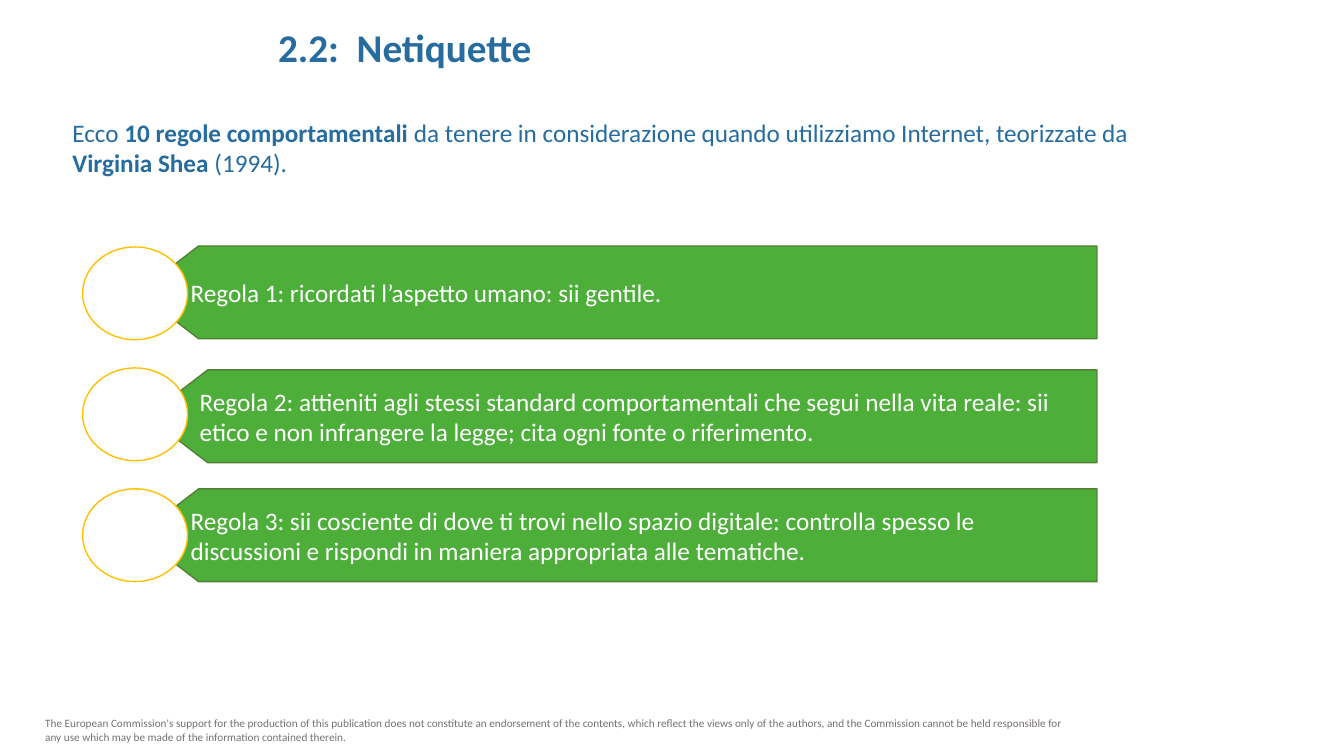
from pptx import Presentation
from pptx.dml.color import RGBColor
from pptx.enum.shapes import MSO_SHAPE as Shape
from pptx.enum.text import MSO_ANCHOR as Anchor
from pptx.oxml.ns import qn
from pptx.util import Inches, Pt
from lxml import etree

BLUE, GREEN, DARK_GREEN = "266C9F", "4EAE3A", "538035"
WHITE, GOLD, GRAY = "FFFFFF", "FFC000", "767171"


def paint(shape, fill, line):
    shape.shadow.inherit = False
    shape.fill.solid()
    shape.fill.fore_color.rgb = RGBColor.from_string(fill)
    shape.line.color.rgb = RGBColor.from_string(line)
    shape.line.width = Pt(1)


def write(shape, runs, size, color, **frame_format):
    frame = shape.text_frame
    for name, value in ({"word_wrap": True} | frame_format).items():
        setattr(frame, name, value)
    paragraph = frame.paragraphs[0]
    paragraph.alignment = 1
    for text, bold in runs:
        run = paragraph.add_run()
        run.text = text
        font_format = {"name": "Calibri", "size": Pt(size), "bold": bold}
        for name, value in font_format.items():
            setattr(run.font, name, value)
        run.font.color.rgb = RGBColor.from_string(color)
    return paragraph


presentation = Presentation()
presentation.slide_width = Inches(13.33)
presentation.slide_height = Inches(7.5)
slide = presentation.slides.add_slide(presentation.slide_layouts[6])

disclaimer = (
    "The European Commission's support for the production of this publication "
    "does not constitute an endorsement of the contents, which reflect the views "
    "only of the authors, and the Commission cannot be held responsible for any "
    "use which may be made of the information contained therein."
)
introduction = [
    ("Ecco ", False),
    ("10 regole comportamentali ", True),
    ("da tenere in considerazione quando utilizziamo Internet, teorizzate da ", False),
    ("Virginia Shea ", True),
    ("(1994).", False),
]
text_boxes = [
    (0.35, 7.06, 10.46, 0.37, [(disclaimer, False)], 8, GRAY),
    (0.62, 1.11, 10.84, 0.71, introduction, 18, BLUE),
]
for left, top, width, height, runs, size, color in text_boxes:
    box = slide.shapes.add_textbox(*map(Inches, (left, top, width, height)))
    write(box, runs, size, color)

title = slide.shapes.add_textbox(Inches(2.66), Inches(0.18), Inches(4.01), Inches(0.6))
title_paragraph = write(title, [("2.2:\tNetiquette", True)], 28, BLUE)
properties = title_paragraph._p.get_or_add_pPr()
tab_list = etree.SubElement(properties, qn("a:tabLst"))
etree.SubElement(tab_list, qn("a:tab"), pos=str(Inches(0.78)), algn="l")

rules = [
    (1.37, 2.44, "Regola 1: ricordati l’aspetto umano: sii gentile."),
    (1.46, 3.67, "Regola 2: attieniti agli stessi standard comportamentali che segui "
     "nella vita reale: sii etico e non infrangere la legge; cita ogni fonte o riferimento."),
    (1.37, 4.85, "Regola 3: sii cosciente di dove ti trovi nello spazio digitale: controlla "
     "spesso le discussioni e rispondi in maniera appropriata alle tematiche."),
]
right, height, point = 10.88, 0.92, 0.6
margins = {
    "margin_left": Inches(0.52),
    "margin_right": Inches(0.11),
    "margin_top": Inches(0.06),
    "margin_bottom": Inches(0.06),
}
for index, (left, top, text) in enumerate(rules):
    bottom = top + height
    corners = [
        (left + point, bottom),
        (left, top + height / 2),
        (left + point, top),
        (right, top),
    ]
    builder = slide.shapes.build_freeform(Inches(right), Inches(bottom))
    builder.add_line_segments([(Inches(x), Inches(y)) for x, y in corners], close=True)
    banner = builder.convert_to_shape()
    paint(banner, GREEN, DARK_GREEN)
    write(banner, [(text, False)], 18, WHITE, vertical_anchor=Anchor.MIDDLE, **margins)

    circle = slide.shapes.add_shape(
        Shape.OVAL, Inches(0.82), Inches(2.45 + 1.2 * index), Inches(1.04), Inches(height)
    )
    paint(circle, WHITE, GOLD)

presentation.save("out.pptx")
